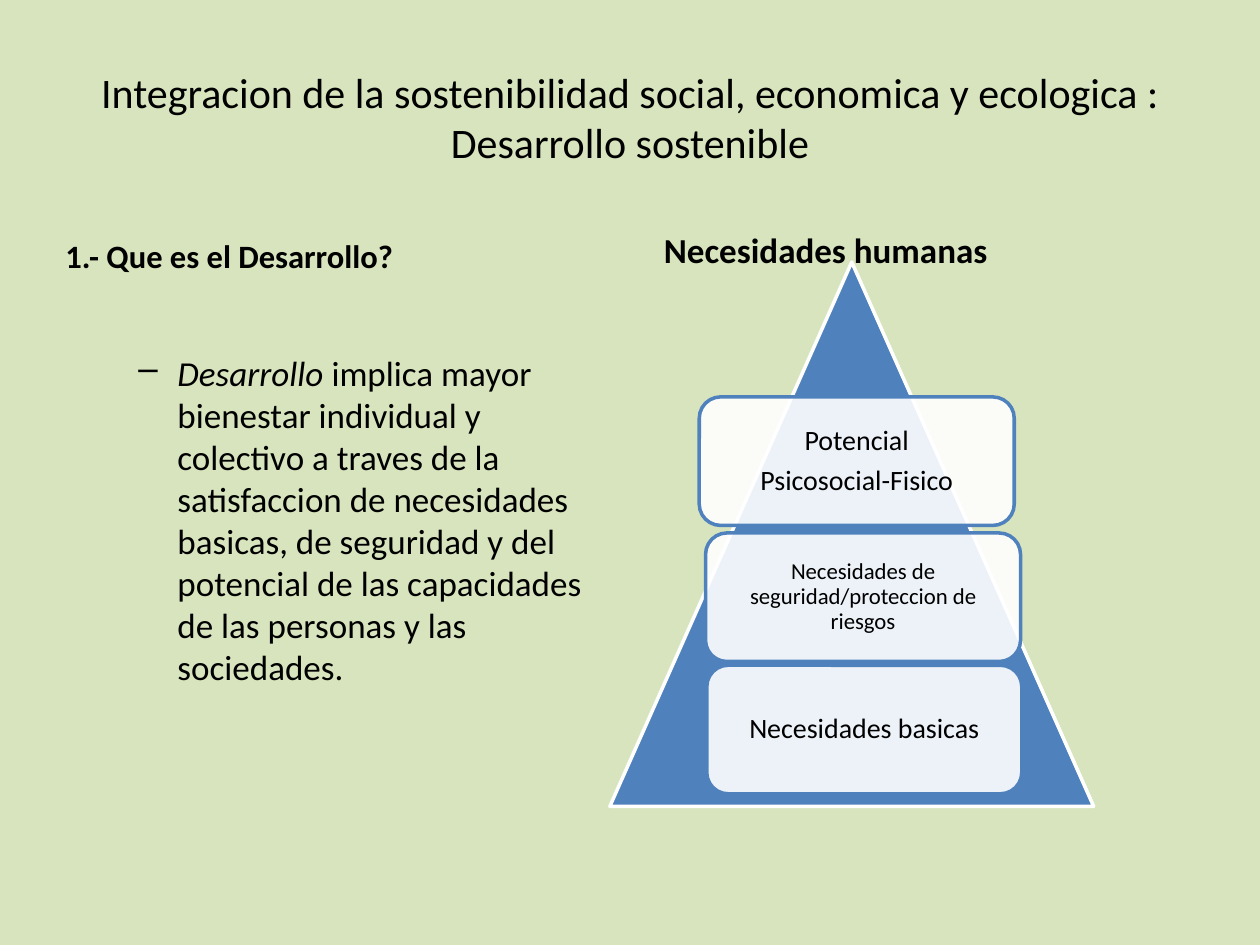
"""Build a slide on sustainable development with a pyramid of human needs."""
import pptx
import pptx.dml.color
import pptx.enum.shapes
import pptx.enum.text
import pptx.oxml
import pptx.oxml.ns
import pptx.util
from lxml import etree

Inches = pptx.util.Inches
Pt = pptx.util.Pt
PP_ALIGN = pptx.enum.text.PP_ALIGN
MSO_ANCHOR = pptx.enum.text.MSO_ANCHOR
MSO_SHAPE = pptx.enum.shapes.MSO_SHAPE
BLUE = "4F81BD"
WHITE = "FFFFFF"


def color(value):
    return pptx.dml.color.RGBColor.from_string(value)


def write_text(shape, text, size, anchor, alignment, bold=False):
    text_frame = shape.text_frame
    text_frame.word_wrap = True
    text_frame.vertical_anchor = anchor
    text_frame.text = text
    for paragraph in text_frame.paragraphs:
        paragraph.alignment = alignment
        for run in paragraph.runs:
            run.font.name = "Calibri"
            run.font.size = Pt(size)
            run.font.bold = bold
            run.font.color.rgb = color("000000")
    return text_frame


presentation = pptx.Presentation()
presentation.slide_width = Inches(10)
presentation.slide_height = Inches(7.5)
slide = presentation.slides.add_slide(presentation.slide_layouts[6])
slide.background.fill.solid()
slide.background.fill.fore_color.rgb = color("D7E4BD")

text_boxes = [
    (0.5, 0.3, 9, 1.25, "Integracion de la sostenibilidad social, economica y ecologica : "
     "Desarrollo sostenible", 24, MSO_ANCHOR.MIDDLE, PP_ALIGN.CENTER, False),
    (0.42, 1.83, 4.42, 0.4, "1.- Que es el Desarrollo?", 18.6,
     MSO_ANCHOR.MIDDLE, PP_ALIGN.LEFT, True),
    (5.17, 1.5, 4.42, 0.7, "Necesidades humanas", 20,
     MSO_ANCHOR.BOTTOM, PP_ALIGN.LEFT, True),
]
for left, top, width, height, *content in text_boxes:
    text_box = slide.shapes.add_textbox(Inches(left), Inches(top), Inches(width), Inches(height))
    write_text(text_box, *content)

definition_box = slide.shapes.add_textbox(Inches(0.5), Inches(2.74), Inches(4.42), Inches(3.96))
definition = write_text(definition_box, "Desarrollo ", 20, MSO_ANCHOR.TOP, PP_ALIGN.LEFT)
paragraph = definition.paragraphs[0]
properties = paragraph.runs[0].font
properties.italic = True
run = paragraph.add_run()
run.text = ("implica mayor bienestar individual y colectivo a traves de la satisfaccion de "
            "necesidades basicas, de seguridad y del potencial de las capacidades de las "
            "personas y las sociedades.")
run.font.name = "Calibri"
run.font.size = Pt(20)
run.font.color.rgb = color("000000")
paragraph_properties = paragraph._p.get_or_add_pPr()
paragraph_properties.set("marL", str(Inches(0.81)))
paragraph_properties.set("indent", str(Inches(-0.31)))
bullet = etree.SubElement(paragraph_properties, pptx.oxml.ns.qn("a:buChar"))
bullet.set("char", "–")

pyramid = slide.shapes.add_shape(
    MSO_SHAPE.ISOSCELES_TRIANGLE, Inches(4.84), Inches(2.08), Inches(3.84), Inches(4.32))
pyramid.shadow.inherit = False
pyramid.fill.solid()
pyramid.fill.fore_color.rgb = color(BLUE)
pyramid.line.color.rgb = color(WHITE)
pyramid.line.width = Pt(2)

needs = [
    (5.55, 3.15, "Potencial\nPsicosocial-Fisico", 16, 0.07),
    (5.6, 4.23, "Necesidades de seguridad/proteccion de riesgos", 13, 0.05),
    (5.61, 5.28, "Necesidades basicas", 16, 0.07),
]
for left, top, text, size, margin in needs:
    need = slide.shapes.add_shape(
        MSO_SHAPE.ROUNDED_RECTANGLE, Inches(left), Inches(top), Inches(2.5), Inches(1.02))
    need.shadow.inherit = False
    need.fill.solid()
    need.fill.fore_color.rgb = color(WHITE)
    fill_color = need._element.spPr.find(".//" + pptx.oxml.ns.qn("a:srgbClr"))
    etree.SubElement(fill_color, pptx.oxml.ns.qn("a:alpha")).set("val", "90000")
    need.line.color.rgb = color(BLUE)
    need.line.width = Pt(2)
    text_frame = write_text(need, text, size, MSO_ANCHOR.MIDDLE, PP_ALIGN.CENTER)
    text_frame.margin_left = text_frame.margin_right = Inches(margin)
    text_frame.margin_top = text_frame.margin_bottom = Inches(margin)
    for paragraph in text_frame.paragraphs:
        paragraph.line_spacing = 0.9
    for paragraph in text_frame.paragraphs[:-1]:
        paragraph.space_after = Pt(5.6)

presentation.save("out.pptx")
